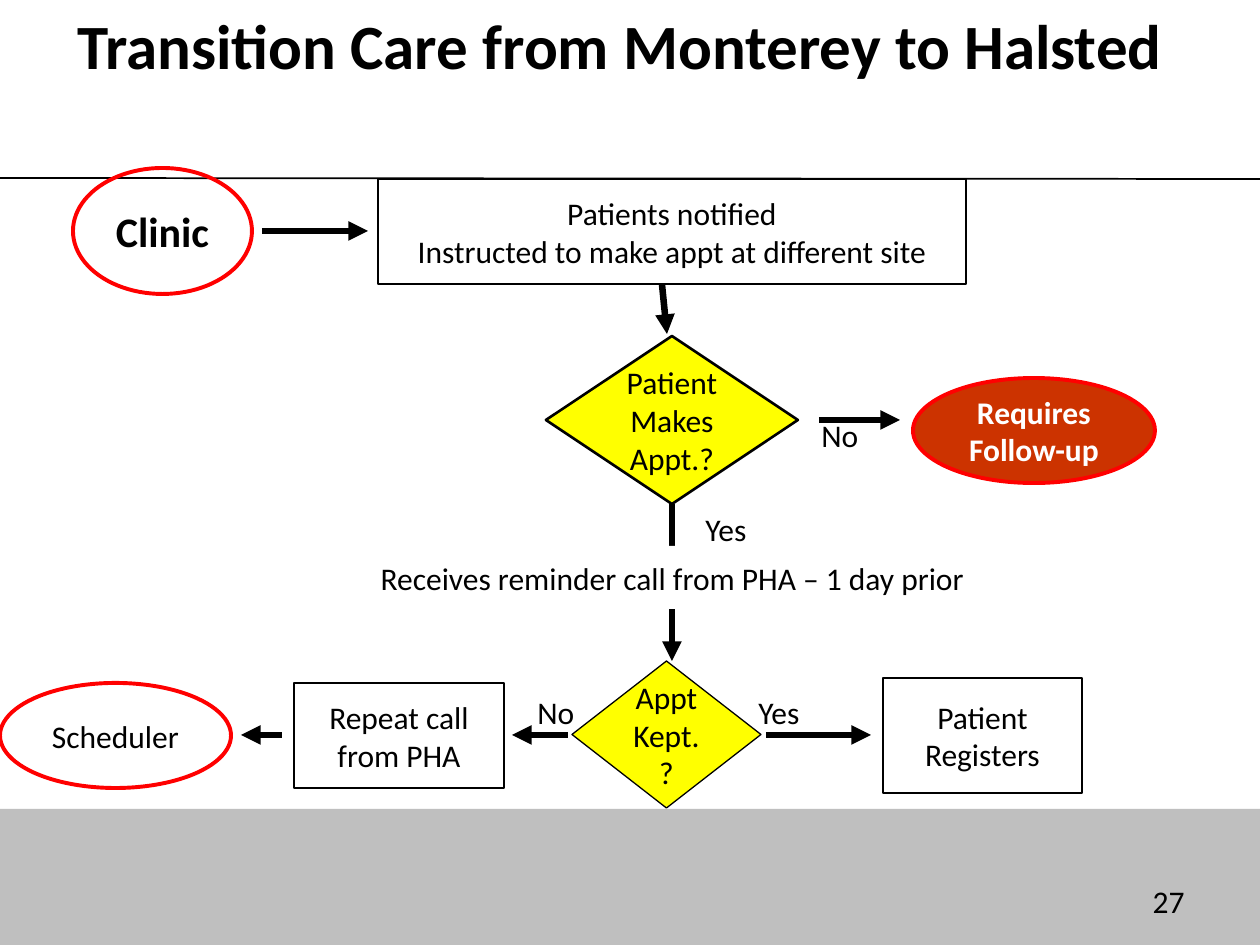
import pptx
import pptx.util
import pptx.dml.color
import pptx.enum.shapes
import pptx.enum.text
import pptx.oxml.ns
from lxml import etree

SHAPE = pptx.enum.shapes.MSO_SHAPE
ALIGN = pptx.enum.text.PP_ALIGN
ANCHOR = pptx.enum.text.MSO_ANCHOR
EMU_PER_PX = 914400 // 126
BLACK, WHITE, RED, YELLOW = "000000", "FFFFFF", "FF0000", "FFFF00"

TITLE = "Transition Care from Monterey to Halsted"
TITLE_BOX = (53, 0, 1134, 141)
FOOTER_BAND = (0, 809, 1260, 136)
HEADER_RULE = (0, 178, 1260, 179)
PAGE_NUMBER = ("27", (903, 876, 294, 50))

# text, preset shape, box, fill, line colour, line width, font changes
STEPS = [
    ("Patient Makes Appt.?", SHAPE.DIAMOND, (546, 336, 252, 168), YELLOW, BLACK, 1.5, {}),
    ("Appt Kept.?", SHAPE.DIAMOND, (572, 661, 189, 147), YELLOW, BLACK, 0.75, {}),
    ("Patient Registers", SHAPE.RECTANGLE, (883, 678, 199, 115), None, BLACK, 1.5, {}),
    ("Repeat call from PHA", SHAPE.RECTANGLE, (294, 683, 210, 105), None, BLACK, 1.5, {}),
    ("Scheduler", SHAPE.OVAL, (0, 683, 231, 105), None, RED, 2.25, {}),
    ("Clinic", SHAPE.OVAL, (73, 168, 179, 126), None, RED, 2.25, {"size": 24, "bold": True}),
    ("Patients notified\nInstructed to make appt at different site", SHAPE.RECTANGLE,
     (378, 179, 588, 105), None, BLACK, 1, {}),
    ("Requires Follow-up", SHAPE.OVAL, (913, 378, 242, 105), "CC3300", RED, 2.25,
     {"color": WHITE, "bold": True}),
]
REMINDER = ("Receives reminder call from PHA – 1 day prior", SHAPE.RECTANGLE,
            (305, 546, 735, 63), WHITE, None, 0, {})

ARROWS = [
    (262, 231, 368, 231),
    (662, 284, 667, 334),
    (672, 504, 672, 661),
    (819, 420, 900, 420),
    (766, 735, 871, 735),
    (568, 735, 512, 735),
    (282, 735, 241, 735),
]
ANSWERS = [("Yes", 693, 504), ("No", 809, 410), ("Yes", 746, 687), ("No", 525, 687)]
ANSWER_SIZE = (95, 50)


def px(values):
    return [pptx.util.Emu(value * EMU_PER_PX) for value in values]


def rgb(color):
    return pptx.dml.color.RGBColor.from_string(color)


def write(shape, text, align=ALIGN.CENTER, anchor=ANCHOR.MIDDLE, size=18, color=BLACK, bold=False):
    frame = shape.text_frame
    frame.text = text
    frame.word_wrap = True
    frame.vertical_anchor = anchor
    font_values = {"name": "Calibri", "size": pptx.util.Pt(size), "bold": bold}
    for paragraph in frame.paragraphs:
        paragraph.alignment = align
        for attribute, value in font_values.items():
            setattr(paragraph.font, attribute, value)
        paragraph.font.color.rgb = rgb(color)


def add_step(slide, text, preset, box, fill, line, width, font):
    step = slide.shapes.add_shape(preset, *px(box))
    step.shadow.inherit = False
    if fill:
        step.fill.solid()
        step.fill.fore_color.rgb = rgb(fill)
    else:
        step.fill.background()
    if line:
        step.line.color.rgb = rgb(line)
        step.line.width = pptx.util.Pt(width)
    else:
        step.line.fill.background()
    if text:
        write(step, text, **font)


def add_line(slide, ends, width, arrowhead=False):
    line = slide.shapes.add_connector(pptx.enum.shapes.MSO_CONNECTOR.STRAIGHT, *px(ends))
    line.line.color.rgb = rgb(BLACK)
    line.line.width = pptx.util.Pt(width)
    if arrowhead:
        etree.SubElement(line.line._get_or_add_ln(), pptx.oxml.ns.qn("a:tailEnd"), type="triangle")
    etree.SubElement(line._element.spPr, pptx.oxml.ns.qn("a:effectLst"))


def add_label(slide, text, box, align):
    write(slide.shapes.add_textbox(*px(box)), text, align, ANCHOR.TOP)


def main():
    deck = pptx.Presentation()
    deck.slide_width, deck.slide_height = px((1260, 945))
    slide = deck.slides.add_slide(deck.slide_layouts[5])

    add_step(slide, "", SHAPE.RECTANGLE, FOOTER_BAND, "BFBFBF", None, 0, {})
    add_line(slide, HEADER_RULE, 1)
    add_label(slide, *PAGE_NUMBER, ALIGN.RIGHT)

    title = slide.shapes.title
    title.left, title.top, title.width, title.height = px(TITLE_BOX)
    write(title, TITLE, anchor=ANCHOR.TOP, size=36, bold=True)

    for step in STEPS:
        add_step(slide, *step)
    for ends in ARROWS:
        add_line(slide, ends, 3.75, arrowhead=True)
    for answer, left, top in ANSWERS:
        add_label(slide, answer, (left, top, *ANSWER_SIZE), ALIGN.LEFT)
    # The reminder goes last so that it interrupts the arrow behind it
    add_step(slide, *REMINDER)

    deck.save("out.pptx")


if __name__ == "__main__":
    main()
